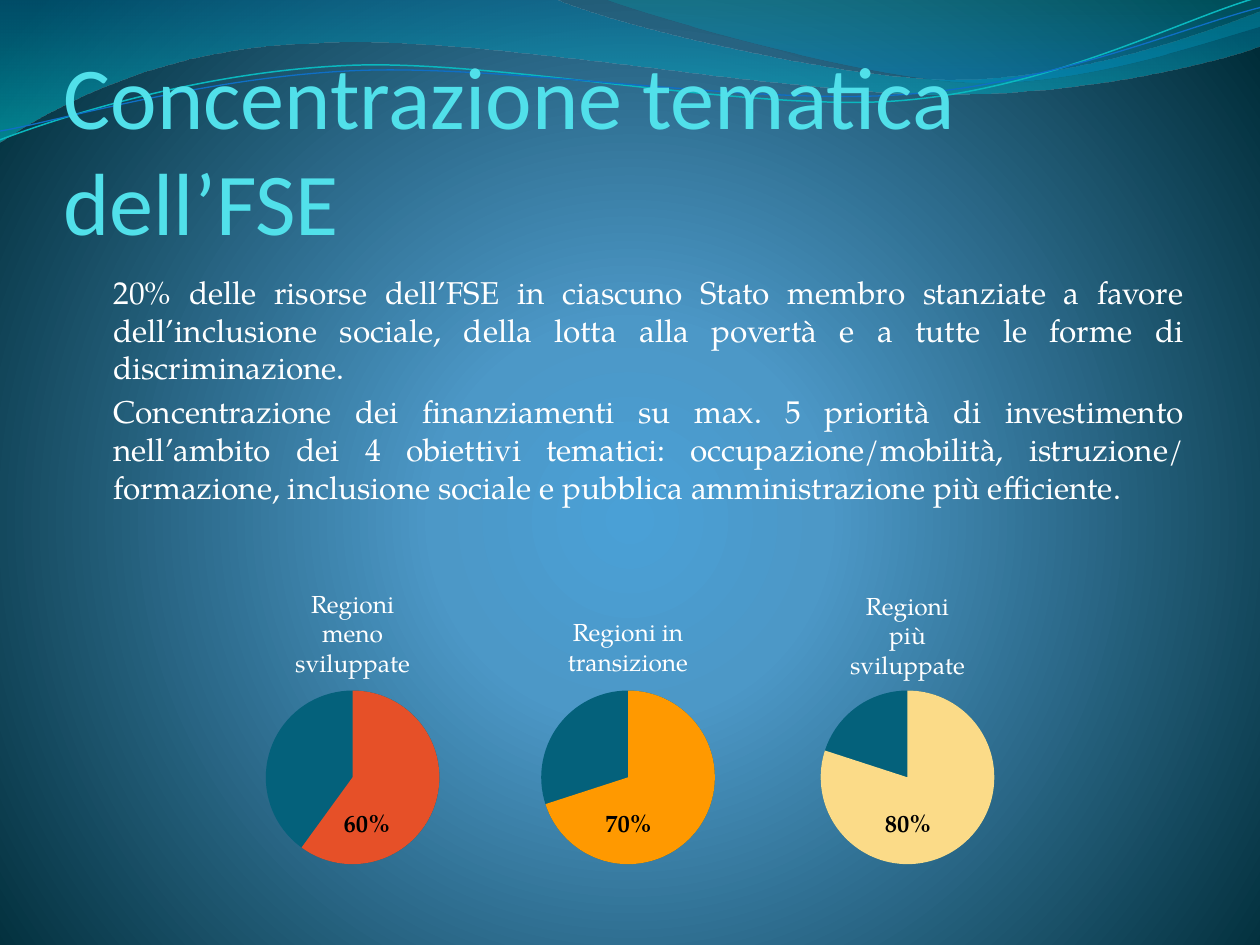
"""Build the slide on the thematic concentration of the FSE."""
import math
from lxml import etree
from pptx import Presentation, oxml
from pptx import util as u
from pptx.dml import color
from pptx.enum import shapes, text

Pt = u.Pt
rgb = color.RGBColor.from_string
NS = "http://schemas.openxmlformats.org/drawingml/2006/main"
SERIF = "TeX Gyre Pagella"


def set_gradient(solid, stops, direction):
    gs = "".join(
        f'<a:gs pos="{pos * 1000}"><a:srgbClr val="{val}"><a:alpha val="{alpha * 1000}"/></a:srgbClr></a:gs>'
        for pos, val, alpha in stops)
    grad = oxml.parse_xml(f'<a:gradFill xmlns:a="{NS}" rotWithShape="1"><a:gsLst>{gs}</a:gsLst>{direction}</a:gradFill>')
    solid.getparent().replace(solid, grad)


def set_text(sp, paras, anchor, align, fmt):
    tf = sp.text_frame
    tf.word_wrap = True
    tf.vertical_anchor = anchor
    for side in ("left", "top", "right", "bottom"):
        setattr(tf, f"margin_{side}", 0)
    for i, line in enumerate(paras):
        p = tf.paragraphs[0] if i == 0 else tf.add_paragraph()
        p.alignment = align
        r = p.add_run()
        r.text = line
        for name, value in fmt.items():
            if name == "color":
                r.font.color.rgb = rgb(value)
            else:
                setattr(r.font, name, value)
    return tf


prs = Presentation()
prs.slide_width, prs.slide_height = Pt(720), Pt(540)
s = prs.slides.add_slide(prs.slide_layouts[6])

s.background.fill.solid()
set_gradient(
    s.element.xpath(".//p:bgPr/a:solidFill")[0],
    [(0, "4AA0D6", 100), (25, "4C98C7", 100), (100, "002C38", 100)],
    '<a:path path="circle"><a:fillToRect l="10000" t="110000" r="10000" b="100000"/></a:path>')

outlines = [
    {"start": (0, 0), "stops": [(0, "0074A1", 45), (100, "00C6CF", 55)], "segments": [
        [(316.8, -0.7)],
        [(342.7, 12.2), (478.1, 45.4), (545.8, 45.4)],
        [(614.2, 45.4), (689.8, 18.7), (720, 6.5)],
        [(720.7, 25.9)],
        [(707.8, 31.7), (626.4, 54.7), (537.1, 54)],
        [(447.8, 54), (275, 20.2), (185, 24.5)],
        [(92.9, 25.9), (33.1, 59.8), (-0.7, 81.4)],
        [(0, 0)]]},
    {"start": (344.9, -0.7), "stops": [(0, "00A1A9", 30), (80, "008BBF", 45)], "segments": [
        [(366.5, 7.9), (491, 44.6), (553.7, 46.8)],
        [(616.3, 49.7), (691.9, 23), (720, 15.1)],
        [(720, 0)],
        [(344.9, -0.7)]]},
    {"start": (0, 79.9), "line": ("0AB8BF", 0.85), "segments": [
        [(34.6, 67), (113.8, 41), (199.4, 37.4)],
        [(284.4, 33.8), (427, 64.1), (513.4, 57.6)],
        [(599.8, 51.1), (675.4, 10.8), (718.6, -1.4)]]},
    {"start": (0, 74.9), "line": ("0F6FC6", 0.75), "segments": [
        [(33.8, 69.1), (118.1, 43.9), (203.8, 40.3)],
        [(290.2, 36.7), (429.8, 60.5), (516.2, 54)],
        [(601.9, 48.2), (677.5, 15.1), (720, 4.3)]]},
]

CY, RADIUS = 444.2, 49.6
regions = [
    ("Regioni meno sviluppate", 60, "E65028", 201.5, 209.7, 387),
    ("Regioni in transizione", 70, "FF9900", 358.9, 359.2, 386.3),
    ("Regioni più sviluppate", 80, "FBDB88", 518.6, 518.9, 388.1),
]
for caption, share, fill, cx, label_x, bottom in regions:
    segments = [[(cx, CY - RADIUS)]]
    end = 3.6 * share
    for begin in range(0, math.ceil(end), 90):
        a, b = math.radians(begin), math.radians(min(begin + 90, end))
        pull = 4 / 3 * math.tan((b - a) / 4)
        units = [(math.sin(a) + pull * math.cos(a), math.cos(a) - pull * math.sin(a)),
                 (math.sin(b) - pull * math.cos(b), math.cos(b) + pull * math.sin(b)),
                 (math.sin(b), math.cos(b))]
        segments.append([(cx + RADIUS * x, CY - RADIUS * y) for x, y in units])
    segments.append([(cx, CY)])
    outlines.append({"start": (cx, CY), "fill": fill, "segments": segments})
    disc = s.shapes.add_shape(shapes.MSO_SHAPE.OVAL, Pt(cx - RADIUS), Pt(CY - RADIUS), Pt(2 * RADIUS), Pt(2 * RADIUS))
    disc.shadow.inherit = False
    disc.fill.solid()
    disc.fill.fore_color.rgb = rgb("04617B")
    disc.line.fill.background()

for outline in outlines:
    fb = s.shapes.build_freeform(*map(Pt, outline["start"]))
    pts = [(Pt(x), Pt(y)) for seg in outline["segments"] for x, y in seg]
    fb.add_line_segments(pts, close="line" not in outline)
    sp = fb.convert_to_shape()
    sp.shadow.inherit = False
    steps = iter(sp.element.xpath(".//a:path/a:lnTo"))
    for seg in outline["segments"]:
        step = next(steps)
        if len(seg) == 3:
            step.tag = f"{{{NS}}}cubicBezTo"
            for extra in (next(steps), next(steps)):
                step.append(extra[0])
                extra.getparent().remove(extra)
    if "line" in outline:
        sp.fill.background()
        sp.line.color.rgb = rgb(outline["line"][0])
        sp.line.width = Pt(outline["line"][1])
        continue
    sp.line.fill.background()
    sp.fill.solid()
    if "fill" in outline:
        sp.fill.fore_color.rgb = rgb(outline["fill"])
    else:
        set_gradient(sp.element.xpath("./p:spPr/a:solidFill")[0], outline["stops"],
                     '<a:lin ang="5400000" scaled="0"/>')

title = s.shapes.add_textbox(Pt(36.4), Pt(0.8), Pt(648), Pt(144))
set_text(title, ["Concentrazione tematica dell’FSE"],
         text.MSO_ANCHOR.BOTTOM, text.PP_ALIGN.LEFT,
         {"name": "Calibri", "size": Pt(50.4), "color": "51E0EA"})

body = s.shapes.add_textbox(Pt(43.2), Pt(155.9), Pt(633.4), Pt(138))
tf = set_text(
    body,
    ["20% delle risorse dell’FSE in ciascuno Stato membro stanziate a favore dell’inclusione sociale, "
     "della lotta alla povertà e a tutte le forme di discriminazione.",
     "Concentrazione dei finanziamenti su max. 5 priorità di investimento nell’ambito dei 4 obiettivi tematici: "
     "occupazione/mobilità, istruzione/ formazione, inclusione sociale e pubblica amministrazione più efficiente."],
    text.MSO_ANCHOR.TOP, text.PP_ALIGN.JUSTIFY,
    {"name": SERIF, "size": Pt(18), "color": "FFFFFF"})
for p in tf.paragraphs:
    p.space_before = Pt(3.6)
    pPr = p._p.get_or_add_pPr()
    pPr.set("marL", str(Pt(21.6)))
    pPr.set("indent", str(-Pt(21.6)))
    clr = etree.SubElement(pPr, f"{{{NS}}}buClr")
    etree.SubElement(clr, f"{{{NS}}}srgbClr", val="0BD0D9")
    etree.SubElement(pPr, f"{{{NS}}}buSzPct", val="95000")
    etree.SubElement(pPr, f"{{{NS}}}buFont", typeface="Wingdings 2", charset="2")
    etree.SubElement(pPr, f"{{{NS}}}buChar", char="")

for caption, share, fill, cx, label_x, bottom in regions:
    label = s.shapes.add_shape(shapes.MSO_SHAPE.ROUNDED_RECTANGLE, Pt(label_x - 25.5), Pt(430), Pt(51), Pt(51))
    label.shadow.inherit = False
    label.fill.background()
    label.line.fill.background()
    set_text(label, [f"{share}%"], text.MSO_ANCHOR.BOTTOM, text.PP_ALIGN.CENTER,
             {"name": SERIF, "size": Pt(14), "color": "000000", "bold": True})
    note = s.shapes.add_textbox(Pt(cx - 35), Pt(bottom - 54), Pt(70), Pt(54))
    set_text(note, [caption], text.MSO_ANCHOR.BOTTOM, text.PP_ALIGN.CENTER,
             {"name": SERIF, "size": Pt(14), "color": "FFFFFF"})

prs.save("out.pptx")
